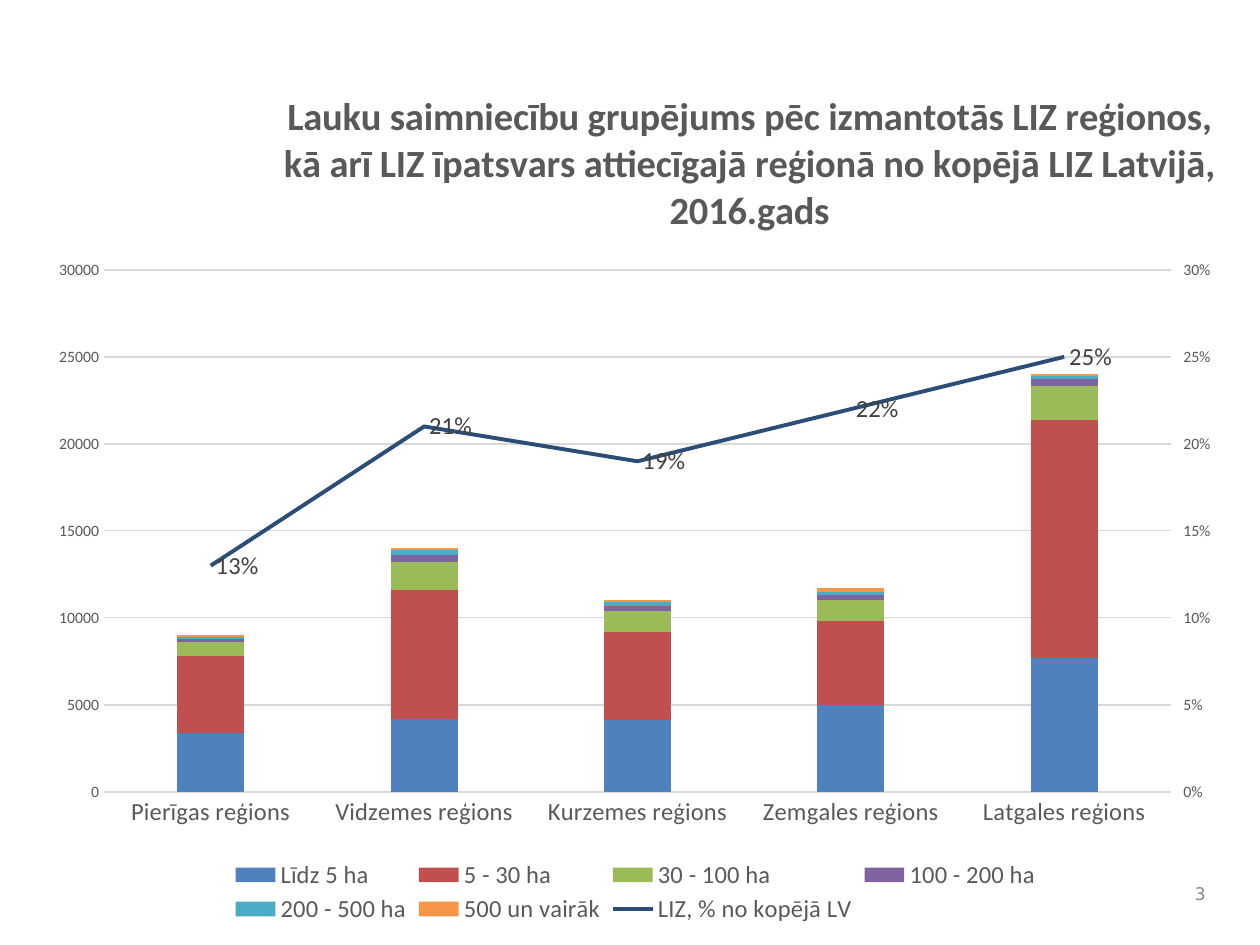
from pptx import Presentation
from pptx.chart.axis import ValueAxis
from pptx.chart.data import CategoryChartData
from pptx.dml.color import RGBColor
from pptx.enum.chart import (XL_CHART_TYPE, XL_LABEL_POSITION, XL_LEGEND_POSITION,
                             XL_MARKER_STYLE, XL_TICK_MARK)
from pptx.enum.text import MSO_ANCHOR, PP_ALIGN
from pptx.oxml import parse_xml
from pptx.oxml.ns import nsdecls, qn
from pptx.util import Emu, Pt

PX = 914400 // 126
GRAY = RGBColor(0x59, 0x59, 0x59)
PALE = RGBColor(0xD9, 0xD9, 0xD9)
DARK = RGBColor(0x40, 0x40, 0x40)
NOTE = RGBColor(0x8C, 0x8C, 0x8C)
BLACK = RGBColor(0, 0, 0)
NAVY = RGBColor(0x2C, 0x4D, 0x75)

TITLE = ("Lauku saimniecību grupējums pēc izmantotās LIZ reģionos, kā arī LIZ "
         "īpatsvars attiecīgajā reģionā no kopējā LIZ Latvijā, 2016.gads")
REGIONS = [name + " reģions" for name in
           ("Pierīgas", "Vidzemes", "Kurzemes", "Zemgales", "Latgales")]
FARMS = [
    ("Līdz 5 ha", (3400, 4200, 4100, 5000, 7700), RGBColor(0x4F, 0x81, 0xBD)),
    ("5 - 30 ha", (4400, 7400, 5100, 4800, 13700), RGBColor(0xC0, 0x50, 0x4D)),
    ("30 - 100 ha", (800, 1600, 1200, 1200, 1900), RGBColor(0x9B, 0xBB, 0x59)),
    ("100 - 200 ha", (200, 400, 300, 300, 400), RGBColor(0x80, 0x64, 0xA2)),
    ("200 - 500 ha", (100, 300, 200, 200, 200), RGBColor(0x4B, 0xAC, 0xC6)),
    ("500 un vairāk", (100, 100, 100, 200, 100), RGBColor(0xF7, 0x96, 0x46)),
]
SHARE = ("LIZ, % no kopējā LV", (0.13, 0.21, 0.19, 0.22, 0.25))

LINE_XML = f"""<c:lineChart {nsdecls('c')}>
  <c:grouping val="standard"/><c:varyColors val="0"/>
  <c:marker val="1"/><c:axId val="5001"/><c:axId val="5002"/>
</c:lineChart>"""
CAT_XML = f"""<c:catAx {nsdecls('c')}>
  <c:axId val="5001"/><c:scaling><c:orientation val="minMax"/></c:scaling>
  <c:delete val="1"/><c:axPos val="b"/><c:crossAx val="5002"/>
</c:catAx>"""
VAL_XML = f"""<c:valAx {nsdecls('c')}>
  <c:axId val="5002"/><c:scaling><c:orientation val="minMax"/></c:scaling>
  <c:delete val="0"/><c:axPos val="r"/><c:tickLblPos val="nextTo"/>
  <c:crossAx val="5001"/><c:crosses val="max"/>
</c:valAx>"""


def style(font, size, color, face="Calibri"):
    font.size, font.name = Pt(size), face
    font.color.rgb = color


def arrange(node, index, box, chart, inner=False):
    """Fix a chart part at a px box measured from the chart corner."""
    for old in node.findall(qn("c:layout")):
        node.remove(old)
    rows = '<c:layoutTarget val="inner"/>' if inner else ""
    rows += '<c:xMode val="edge"/><c:yMode val="edge"/>'
    for key, size, whole in zip("xywh", box, (chart[2], chart[3]) * 2):
        rows += f'<c:{key} val="{size / whole:.4f}"/>'
    node.insert(index, parse_xml(
        f"<c:layout {nsdecls('c')}><c:manualLayout>{rows}</c:manualLayout></c:layout>"))


def scale(axis, top, step, form, tick):
    """Style a value axis."""
    axis.minimum_scale, axis.maximum_scale, axis.major_unit = 0, top, step
    axis.major_tick_mark, axis.minor_tick_mark = tick, XL_TICK_MARK.NONE
    axis.tick_labels.number_format = form
    axis.tick_labels.number_format_is_linked = False
    style(axis.tick_labels.font, 9, GRAY)
    axis.format.line.fill.background()


def add_share(chart):
    """Move the last series to a line on a right-hand axis."""
    area = chart.element.find(".//" + qn("c:plotArea"))
    bars = area.find(qn("c:barChart"))
    ser = bars.findall(qn("c:ser"))[-1]
    for flag in ser.findall(qn("c:invertIfNegative")):
        ser.remove(flag)
    line = parse_xml(LINE_XML)
    line.insert(2, ser)
    bars.addnext(line)
    right = parse_xml(VAL_XML)
    last = area.findall(qn("c:valAx"))[-1]
    last.addnext(right)
    right.addnext(parse_xml(CAT_XML))
    scale(ValueAxis(right), 0.3, 0.05, "0%", XL_TICK_MARK.OUTSIDE)

    share = chart.plots[1].series[0]
    share.smooth = False
    share.marker.style = XL_MARKER_STYLE.NONE
    share.format.line.color.rgb = NAVY
    share.format.line.width = Pt(2.25)
    tags = share.data_labels
    tags.show_value = True
    tags.position = XL_LABEL_POSITION.RIGHT
    tags.number_format, tags.number_format_is_linked = "0%", False
    style(tags.font, 14, DARK)
    return area


def add_farms(slide, box):
    data = CategoryChartData(number_format="0")
    data.categories = REGIONS
    for name, vals, _ in FARMS:
        data.add_series(name, vals)
    data.add_series(*SHARE, number_format="0%")
    chart = slide.shapes.add_chart(XL_CHART_TYPE.COLUMN_STACKED,
                                   *(Emu(n * PX) for n in box), data).chart
    style(chart.font, 10, BLACK)

    # Stacked columns
    plot = chart.plots[0]
    plot.gap_width, plot.overlap, plot.vary_by_categories = 219, 100, False
    for ser, (_, _, color) in zip(plot.series, FARMS):
        ser.format.fill.solid()
        ser.format.fill.fore_color.rgb = color

    # Left and bottom axes
    left, base = chart.value_axis, chart.category_axis
    scale(left, 30000, 5000, "0", XL_TICK_MARK.NONE)
    base.major_tick_mark = base.minor_tick_mark = XL_TICK_MARK.NONE
    style(base.tick_labels.font, 14, GRAY)
    for line in (base.format.line, left.major_gridlines.format.line):
        line.color.rgb, line.width = PALE, Pt(0.75)

    # Share line, title and legend
    area = add_share(chart)
    chart.has_title = True
    head = chart.chart_title
    para = head.text_frame.paragraphs[0]
    para.alignment = PP_ALIGN.CENTER
    run = para.add_run()
    run.text = TITLE
    style(run.font, 22, GRAY)
    run.font.bold = True
    chart.has_legend = True
    key = chart.legend
    key.position, key.include_in_layout = XL_LEGEND_POSITION.BOTTOM, False
    style(key.font, 14, GRAY)

    arrange(area, 0, (69, 204, 1067, 522), box, inner=True)
    arrange(chart.element.find(".//" + qn("c:title")), 1, (242, 16), box)
    arrange(chart.element.find(".//" + qn("c:legend")), 1, (188, 790, 825, 72), box)


def add_number(slide, box):
    frame = slide.shapes.add_textbox(*(Emu(n * PX) for n in box)).text_frame
    frame.word_wrap = True
    frame.vertical_anchor = MSO_ANCHOR.MIDDLE
    para = frame.paragraphs[0]
    para.alignment = PP_ALIGN.RIGHT
    run = para.add_run()
    run.text = "3"
    style(run.font, 10, NOTE, "DejaVu Sans")


def main():
    deck = Presentation()
    deck.slide_width, deck.slide_height = Emu(9144000), Emu(6858000)
    slide = deck.slides.add_slide(deck.slide_layouts[6])
    add_number(slide, (1176, 872, 42, 42))
    add_farms(slide, (35, 66, 1201, 863))
    deck.save("out.pptx")


if __name__ == "__main__":
    main()
